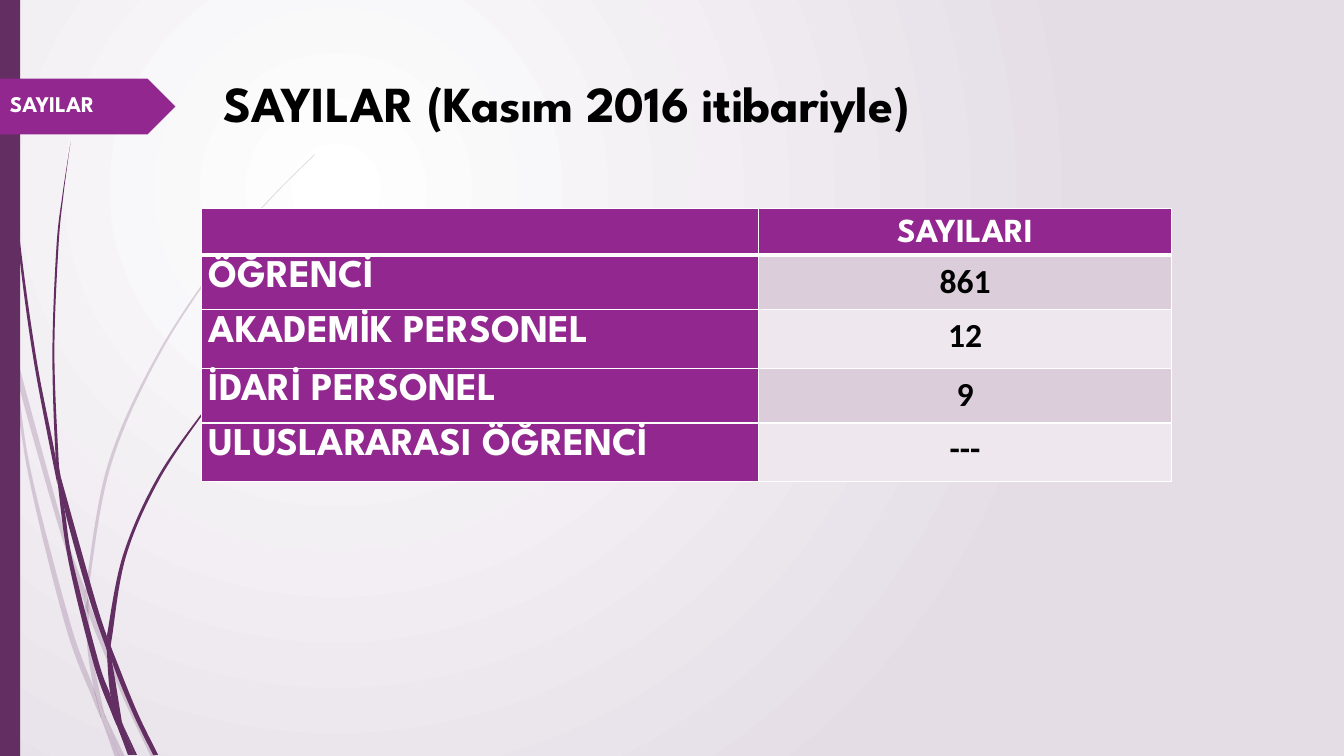
from lxml import etree
from pptx import Presentation
from pptx.dml.color import RGBColor
from pptx.enum.lang import MSO_LANGUAGE_ID
from pptx.enum.shapes import MSO_SHAPE
from pptx.enum.text import MSO_ANCHOR, PP_ALIGN
from pptx.oxml.ns import qn
from pptx.util import Cm, Pt

TITLE = "SAYILAR (Kasım 2016 itibariyle)"
TAG = "SAYILAR"
COUNTS = [
    ("", "SAYILARI"),
    ("ÖĞRENCİ", "861"),
    ("AKADEMİK PERSONEL", "12"),
    ("İDARİ PERSONEL", "9"),
    ("ULUSLARARASI ÖĞRENCİ", "---"),
]
COLUMN_WIDTHS = (14.03, 10.42)
ROW_HEIGHTS = (1.17, 1.38, 1.47, 1.38, 1.47)
HEADING_FONT, NUMBER_FONT = "League Spartan", "Calibri"
COLORS = {
    "white": "FFFFFF", "black": "000000", "mist": "E4DDE6", "plum": "632E62",
    "purple": "92278F", "band_dark": "DCCDDB", "band_light": "EEE8EE",
}

# Pieces of grass blades: (one edge, other edge), from top to bottom, in inches
PALE_PIECES = [
    ([(0, 2.99), (0.1, 3.44), (0.11, 3.5)], [(0, 2.82), (0.09, 3.22), (0.11, 3.5)]),
    ([(0.14, 3.45), (0.17, 3.76), (0.58, 5.22), (0.84, 5.99)],
     [(0.14, 3.45), (0.62, 5.2), (0.85, 5.86)]),
    ([(0.88, 5.96), (0.88, 6.1), (1.23, 6.94), (1.5, 7.51)],
     [(0.88, 5.96), (0.92, 6.07), (1.27, 6.92), (1.55, 7.51)]),
    ([(1.05, 7.11), (1.19, 7.51)], [(1.05, 7.11), (1.24, 7.51)]),
    ([(0.11, 3.5), (0.28, 4.7), (0.65, 6.21), (0.92, 6.93), (1.01, 7.14)],
     [(0.11, 3.5), (0.17, 3.76), (0.31, 4.69), (0.7, 6.19), (0.93, 6.83), (1.01, 7.14)]),
    ([(0.84, 5.99), (0.87, 6.46), (0.93, 6.83), (0.96, 6.92), (1.05, 7.11)],
     [(0.84, 5.99), (0.88, 6.1), (0.91, 6.46), (1.03, 7.06), (1.05, 7.11)]),
    ([(3.12, 1.53), (2.68, 1.97), (2.28, 2.44), (1.58, 3.48), (1.07, 4.61), (0.85, 5.84),
      (0.85, 5.86)],
     [(3.12, 1.54), (2.68, 1.98), (2.29, 2.45), (1.6, 3.49), (1.1, 4.62), (0.88, 5.84),
      (0.88, 5.96)]),
    ([(1.01, 7.14), (1.14, 7.51)], [(1.01, 7.14), (1.19, 7.51)]),
    ([(0.85, 5.86), (0.84, 5.99)], [(0.88, 5.96), (0.88, 6.1)]),
    ([(0.93, 6.83), (0.99, 7.07), (1.01, 7.14), (1.19, 7.51)],
     [(0.93, 6.83), (0.96, 6.92), (1.05, 7.11), (1.19, 7.51)]),
]
DARK_PIECES = [
    ([(0.03, 0), (0.04, 0.48), (0.07, 1.1), (0.17, 2.33), (0.33, 3.55), (0.57, 4.81)],
     [(0.04, 0), (0.05, 0.48), (0.08, 1.09), (0.19, 2.32), (0.36, 3.55), (0.55, 4.53),
      (0.57, 4.81)]),
    ([(0.6, 4.72), (0.64, 5.05), (0.88, 5.92), (1.06, 6.45)],
     [(0.6, 4.72), (0.93, 5.9), (1.06, 6.31)]),
    ([(1.1, 6.41), (1.11, 6.56), (1.32, 7.08), (1.52, 7.49)],
     [(1.1, 6.41), (1.13, 6.49), (1.36, 7.06), (1.57, 7.49)]),
    ([(0.57, 4.77), (0.68, 5.57), (0.93, 6.59), (1.11, 7.08), (1.17, 7.22)],
     [(0.57, 4.77), (0.64, 5.05), (0.72, 5.56), (0.98, 6.57), (1.1, 6.91), (1.17, 7.22)]),
    ([(0.7, 1.41), (0.62, 1.93), (0.56, 2.45), (0.52, 3.49), (0.55, 4.49), (0.6, 4.72)],
     [(0.7, 1.41), (0.63, 1.93), (0.58, 2.45), (0.54, 3.49), (0.58, 4.53), (0.6, 4.72)]),
    ([(1.22, 7.19), (1.33, 7.49)], [(1.22, 7.19), (1.36, 7.49)]),
    ([(0.55, 4.49), (0.57, 4.77), (0.64, 5.05)], [(0.55, 4.49), (0.6, 4.72), (0.64, 5.05)]),
    ([(2.6, 3.44), (2.31, 3.73), (2.04, 4.05), (1.56, 4.74), (1.22, 5.51), (1.06, 6.31)],
     [(2.61, 3.44), (2.31, 3.74), (2.05, 4.06), (1.58, 4.76), (1.25, 5.52), (1.11, 6.33),
      (1.1, 6.41)]),
    ([(1.17, 7.22), (1.27, 7.49)], [(1.17, 7.22), (1.31, 7.49)]),
    ([(1.06, 6.45), (1.1, 6.91), (1.22, 7.19)],
     [(1.06, 6.45), (1.11, 6.56), (1.21, 7.16), (1.22, 7.19)]),
    ([(1.06, 6.31), (1.06, 6.45), (1.11, 6.56)], [(1.06, 6.31), (1.1, 6.41), (1.11, 6.56)]),
    ([(1.1, 6.91), (1.17, 7.22), (1.3, 7.49)], [(1.1, 6.91), (1.22, 7.19), (1.33, 7.49)]),
]


def rgb(name):
    return RGBColor.from_string(COLORS[name])


def paint(shape, color):
    shape.fill.solid()
    shape.fill.fore_color.rgb = rgb(color)
    shape.line.fill.background()
    shape.shadow.inherit = False


def edge_handles(knots):
    """Return the two Bezier handles of each span of a Catmull-Rom curve."""
    padded = [knots[0], *knots, knots[-1]]
    return [([q + (r - p) / 6 for p, q, r in zip(a, b, c)],
             [r - (s - q) / 6 for q, r, s in zip(b, c, d)])
            for a, b, c, d in zip(padded, padded[1:], padded[2:], padded[3:])]


def add_piece(slide, edges, alpha=None):
    down, up = ([(Cm(x * 2.54), Cm(y * 2.54)) for x, y in edge] for edge in edges)
    up.reverse()
    builder = slide.shapes.build_freeform(*down[0])
    builder.add_line_segments(down[1:] + up, close=True)
    piece = builder.convert_to_shape()
    paint(piece, "plum")
    spans = edge_handles(down) + [()] + edge_handles(up)
    for span, handles in zip(list(piece._element.iter(qn("a:lnTo"))), spans):
        if handles:
            span.tag = qn("a:cubicBezTo")
        for position, (x, y) in enumerate(handles):
            span.insert(position, etree.Element(
                qn("a:pt"), x=str(round(x - piece.left)), y=str(round(y - piece.top))))
    if alpha:
        tint = piece._element.spPr.find(".//" + qn("a:srgbClr"))
        etree.SubElement(tint, qn("a:alpha"), val=str(alpha * 1000))


def set_background(slide):
    """Fill with a round gradient centred a quarter of the way in."""
    fill = slide.background.fill
    fill.gradient()
    for stop, color in zip(fill.gradient_stops, ("white", "mist")):
        stop.color.rgb = rgb(color)
    gradient = slide._element.find(".//" + qn("a:gradFill"))
    gradient.remove(gradient.find(qn("a:lin")))
    circle = etree.SubElement(gradient, qn("a:path"))
    circle.set("path", "circle")
    etree.SubElement(circle, qn("a:fillToRect"), l="50000", t="50000", r="100000", b="100000")


def style_paragraph(paragraph, size, color, font=HEADING_FONT):
    paragraph.font.name = font
    paragraph.font.size = Pt(size)
    paragraph.font.bold = True
    paragraph.font.color.rgb = rgb(color)
    for run in paragraph.runs:
        run.font.language_id = MSO_LANGUAGE_ID.TURKISH


def add_label(slide, text, box, size, color):
    frame = slide.shapes.add_textbox(*map(Cm, box)).text_frame
    frame.word_wrap = True
    frame.vertical_anchor = MSO_ANCHOR.MIDDLE
    frame.text = text
    style_paragraph(frame.paragraphs[0], size, color)


def set_borders(cell, top, bottom):
    properties = cell._tc.get_or_add_tcPr()
    widths = {"lnL": 1, "lnR": 1, "lnT": top, "lnB": bottom}
    for position, (side, width) in enumerate(widths.items()):
        line = etree.Element(qn("a:" + side), w=str(Pt(width)))
        solid = etree.SubElement(line, qn("a:solidFill"))
        etree.SubElement(solid, qn("a:srgbClr"), val=COLORS["white"])
        properties.insert(position, line)


def add_counts(slide):
    table = slide.shapes.add_table(
        len(COUNTS), len(COLUMN_WIDTHS), Cm(5.08), Cm(5.26),
        Cm(sum(COLUMN_WIDTHS)), Cm(sum(ROW_HEIGHTS))).table
    for column, width in zip(table.columns, COLUMN_WIDTHS):
        column.width = Cm(width)
    for r, (texts, height) in enumerate(zip(COUNTS, ROW_HEIGHTS)):
        table.rows[r].height = Cm(height)
        for c, text in enumerate(texts):
            cell = table.cell(r, c)
            is_number = r > 0 and c == 1
            band = "band_dark" if r % 2 else "band_light"
            cell.fill.solid()
            cell.fill.fore_color.rgb = rgb(band if is_number else "purple")
            cell.margin_left = cell.margin_right = Cm(0.18)
            cell.margin_top = cell.margin_bottom = 0
            cell.vertical_anchor = MSO_ANCHOR.TOP if r else MSO_ANCHOR.MIDDLE
            set_borders(cell, 3 if r == 1 else 1, 1 if r else 3)
            cell.text = text
            paragraph = cell.text_frame.paragraphs[0]
            paragraph.alignment = PP_ALIGN.CENTER if c else PP_ALIGN.JUSTIFY
            paragraph.line_spacing = 1.15
            if is_number:
                style_paragraph(paragraph, 24, "black", NUMBER_FONT)
            else:
                style_paragraph(paragraph, 28 if r else 24, "white")


deck = Presentation()
deck.slide_width, deck.slide_height = Cm(33.87), Cm(19.05)
slide = deck.slides.add_slide(deck.slide_layouts[6])
set_background(slide)
for edges in PALE_PIECES:
    add_piece(slide, edges, alpha=20)
for edges in DARK_PIECES:
    add_piece(slide, edges)
paint(slide.shapes.add_shape(MSO_SHAPE.RECTANGLE, 0, 0, Cm(0.51), deck.slide_height), "plum")
paint(slide.shapes.add_shape(MSO_SHAPE.PENTAGON, 0, Cm(1.98), Cm(4.42), Cm(1.41)), "purple")
add_label(slide, TAG, (0, 2.14, 4.29, 0.94), 16, "white")
add_counts(slide)
add_label(slide, TITLE, (5.38, 1.63, 24.77, 1.88), 36, "black")
deck.save("out.pptx")
